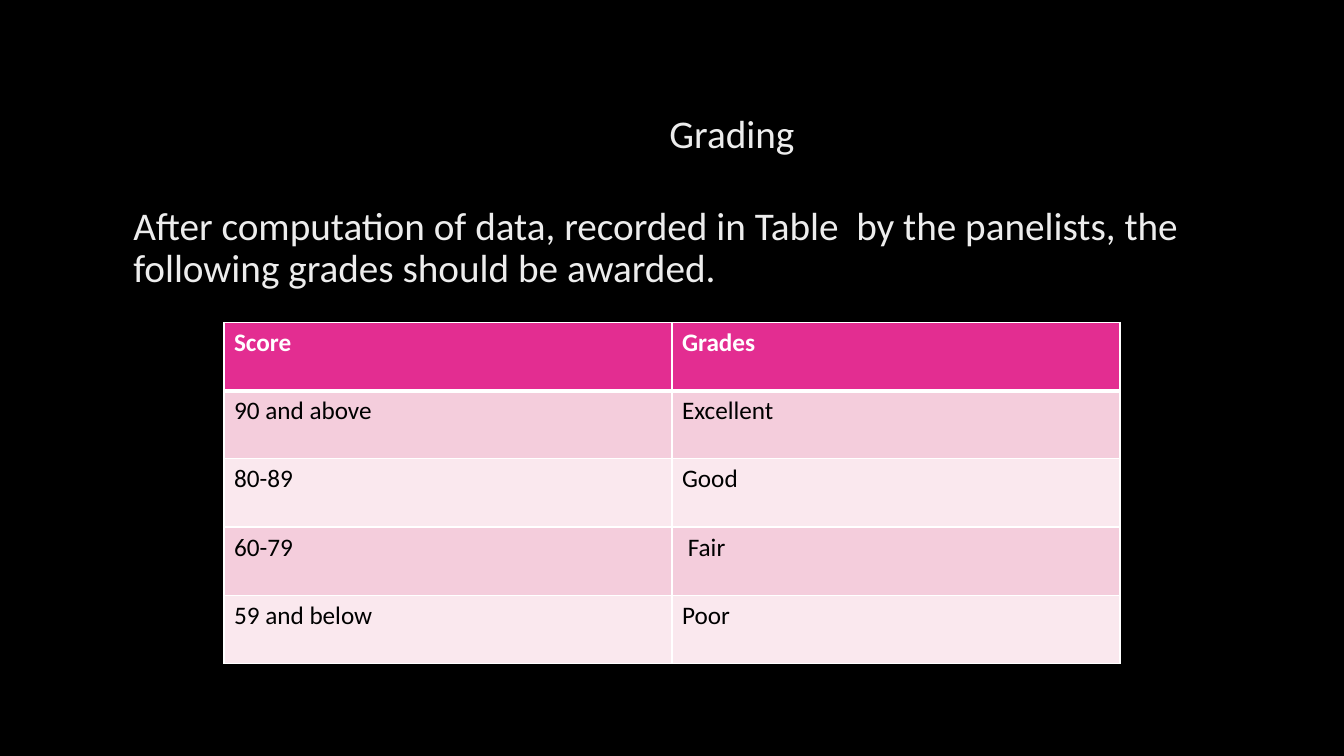
from lxml.etree import SubElement
from pptx import Presentation
from pptx.dml.color import RGBColor
from pptx.enum.text import MSO_ANCHOR, PP_ALIGN
from pptx.oxml.ns import qn
from pptx.util import Inches, Pt

COLORS = {
    "background": "000000",
    "text": "EDEDED",
    "header": "E32D91",
    "odd_row": "F4CDDC",
    "even_row": "FAE8EE",
    "header_text": "FFFFFF",
    "cell_text": "000000",
    "border": "FFFFFF",
}
GRADES = [
    ("Score", "Grades"),
    ("90 and above", "Excellent"),
    ("80-89", "Good"),
    ("60-79", " Fair"),
    ("59 and below", "Poor"),
]


def color(name):
    """Return the named colour of the palette."""
    return RGBColor.from_string(COLORS[name])


class GradingSlide:
    """Holds the style and the current slide, laid out on a 12 by 12 grid."""

    font_name = "Calibri"
    text_size = Pt(28)
    cell_size = Pt(18)

    def __init__(self, deck):
        """Add a black slide with a title and a body placeholder."""
        self.column = deck.slide_width / 12
        self.row = deck.slide_height / 12
        self.page = deck.slides.add_slide(deck.slide_layouts[1])
        fill = self.page.background.fill
        fill.solid()
        fill.fore_color.rgb = color("background")

    def area(self, left, top, width, height):
        """Turn grid columns and rows into slide lengths."""
        return (int(left * self.column), int(top * self.row),
                int(width * self.column), int(height * self.row))

    def add_span(self, para, text, color_name, **formats):
        """Add one span of text and apply its font values."""
        span = para.add_run()
        span.text = text
        for name, value in {"name": self.font_name, **formats}.items():
            setattr(span.font, name, value)
        span.font.color.rgb = color(color_name)

    def placeholder(self, index, text, grid, anchor, **formats):
        """Move and fill a template placeholder without a bullet."""
        box = self.page.placeholders[index]
        box.left, box.top, box.width, box.height = self.area(*grid)
        box.text_frame.vertical_anchor = anchor
        para = box.text_frame.paragraphs[0]
        properties = para._p.get_or_add_pPr()
        properties.set("marL", "0")
        properties.set("indent", "0")
        SubElement(properties, qn("a:buNone"))
        for name, value in {"line_spacing": 0.9, "space_before": Pt(0), **formats}.items():
            setattr(para, name, value)
        self.add_span(para, text, "text", size=self.text_size)

    def border(self, cell, side, width):
        """Draw a solid line on one side of a cell."""
        line = SubElement(cell._tc.get_or_add_tcPr(), qn(f"a:ln{side}"), w=str(Pt(width)))
        fill = SubElement(line, qn("a:solidFill"))
        SubElement(fill, qn("a:srgbClr"), val=COLORS["border"])

    def table(self, rows, grid):
        """Add a banded table with a bold header row."""
        table = self.page.shapes.add_table(len(rows), len(rows[0]), *self.area(*grid)).table
        for row_index, row in enumerate(rows):
            is_header = row_index == 0
            band = "header" if is_header else ("even_row", "odd_row")[row_index % 2]
            widths = {"L": 1, "R": 1, "T": 3 if row_index == 1 else 1, "B": 3 if is_header else 1}
            for column_index, text in enumerate(row):
                cell = table.cell(row_index, column_index)
                for side, width in widths.items():
                    self.border(cell, side, width)
                cell.fill.solid()
                cell.fill.fore_color.rgb = color(band)
                self.add_span(cell.text_frame.paragraphs[0], text,
                              "header_text" if is_header else "cell_text",
                              size=self.cell_size, bold=is_header)


def main():
    """Build the grading slide and save it."""
    deck = Presentation()
    deck.slide_width, deck.slide_height = Inches(13.33), Inches(7.5)
    slide = GradingSlide(deck)
    slide.placeholder(0, "Grading", (1.36, 1, 10.35, 2.32), MSO_ANCHOR.MIDDLE,
                      alignment=PP_ALIGN.CENTER)
    slide.placeholder(
        1,
        "After computation of data, recorded in Table  by the panelists, "
        "the following grades should be awarded.",
        (1.1, 3.2, 10.07, 7.62), MSO_ANCHOR.TOP, alignment=PP_ALIGN.LEFT)
    slide.table(GRADES, (2, 5.12, 8, 5.41))
    deck.save("out.pptx")


if __name__ == "__main__":
    main()
